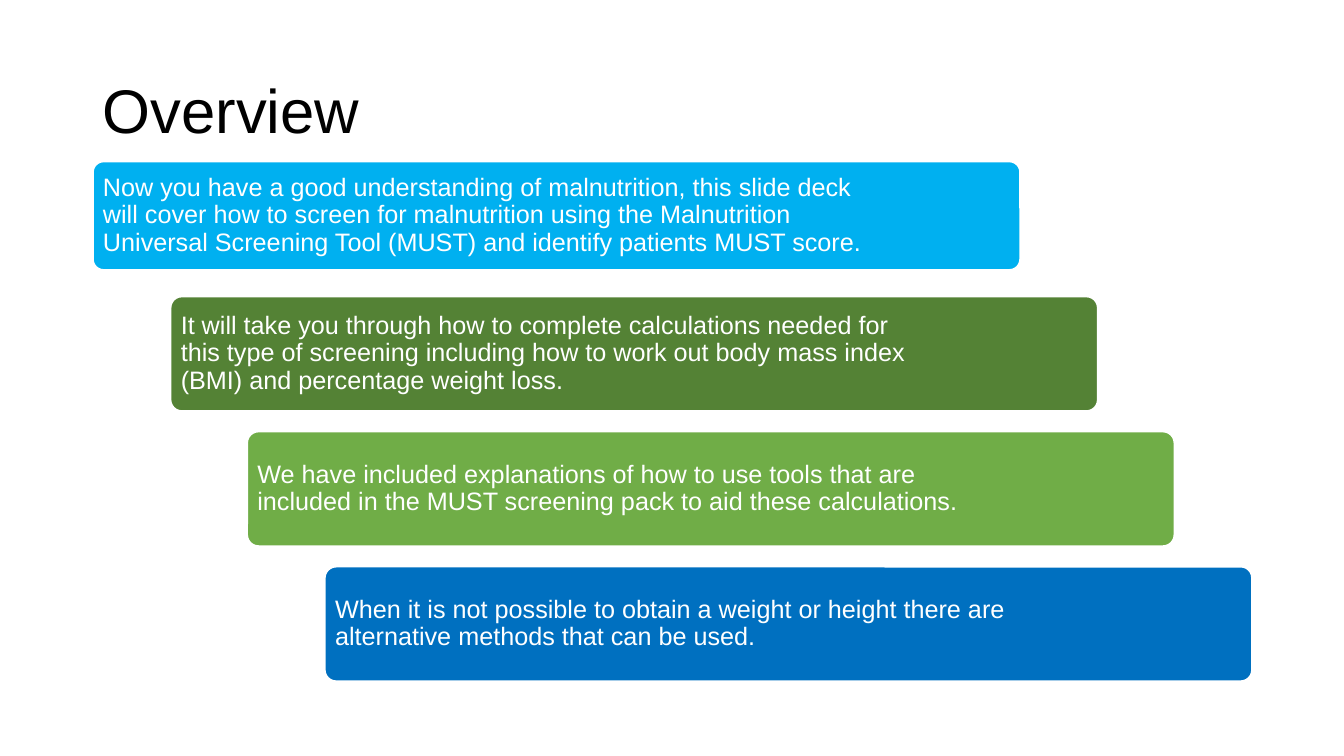
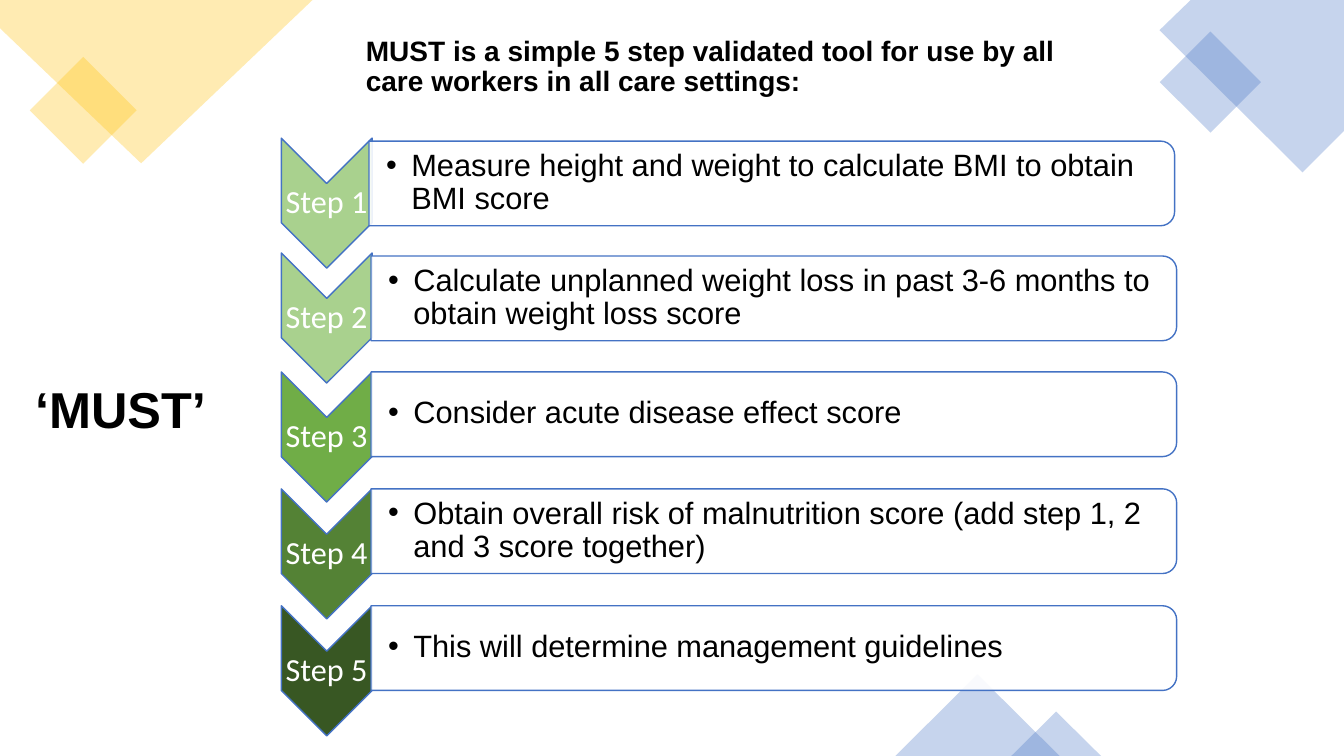
from lxml import etree
from pptx import Presentation
from pptx import util as u
from pptx.dml.color import RGBColor
from pptx.enum import shapes, text
from pptx.oxml.ns import qn

# Shared style
PX = 9144  # 100 px to the inch
BLACK, WHITE, BLUE, GOLD = "000000", "FFFFFF", "4472C4", "FFC000"
SHAPE, ANCHOR, ALIGN = shapes.MSO_SHAPE, text.MSO_ANCHOR, text.PP_ALIGN
TITLE_FONT = {"name": "Arial"}
STEP_FONT = {"name": "Calibri", "size": u.Pt(23)}
BODY_FONT = {"name": "Arial", "size": u.Pt(22)}
CARD_FONT = {"name": "Arial", "size": u.Pt(18)}
DECOR_ALPHA, PANEL_ALPHA = 30, 90

# Slide 1 content: text, fill, height, right inset
CARDS = [
    ("Now you have a good understanding of malnutrition, this slide deck will cover how to "
     "screen for malnutrition using the Malnutrition Universal Screening Tool (MUST) and "
     "identify patients MUST score.", "00B0F0", 108, 135),
    ("It will take you through how to complete calculations needed for this type of screening "
     "including how to work out body mass index (BMI) and percentage weight loss.",
     "548235", 114, 170),
    ("We have included explanations of how to use tools that are included in the MUST "
     "screening pack to aid these calculations.", "70AD47", 114, 170),
    ("When it is not possible to obtain a weight or height there are alternative methods that "
     "can be used.", "0070C0", 114, 170),
]

# Slide 2 content: text, chevron fill, chevron top, panel left, panel top
INTRO = "MUST is a simple 5 step validated tool for use by all care workers in all care settings:"
STEPS = [
    ("Measure height and weight to calculate BMI to obtain BMI score", "A9D18E", 137, 366, 140),
    ("Calculate unplanned weight loss in past 3-6 months to obtain weight loss score",
     "A9D18E", 251, 368, 254),
    ("Consider acute disease effect score", "70AD47", 369, 368, 369),
    ("Obtain overall risk of malnutrition score (add step 1, 2 and 3 score together)",
     "548235", 485, 368, 485),
    ("This will determine management guidelines", "385723", 601, 368, 601),
]
DECOR_SHAPES = [  # kind, box, rotation, colour
    (SHAPE.RECTANGLE, (45, 72, 75, 75), 45, GOLD),
    (SHAPE.RECTANGLE, (1165, 46, 71, 71), 45, BLUE),
    (SHAPE.ISOSCELES_TRIANGLE, (888, 669, 163, 81), 0, BLUE),
    (SHAPE.ISOSCELES_TRIANGLE, (1003, 706, 89, 44), 0, BLUE),
]
DECOR_CORNERS = [  # outline, colour
    ([(0, 0), (310, 0), (140, 162), (0, 28)], GOLD),
    ([(1181, 0), (1333, 0), (1333, 130), (1292, 171), (1150, 30)], BLUE),
]


def color(value):
    return RGBColor.from_string(value)


def px(*values):
    return [round(v * PX) for v in values]


def paint(sp, fill, line=None, width=1, alpha=100):
    sp.shadow.inherit = False
    sp.fill.solid()
    sp.fill.fore_color.rgb = color(fill)
    if alpha < 100:
        clr = sp.fill._xPr.find(qn("a:solidFill"))[0]
        etree.SubElement(clr, qn("a:alpha"), val=str(alpha * 1000))
    if line:
        sp.line.color.rgb = color(line)
        sp.line.width = u.Pt(width)
    else:
        sp.line.fill.background()
    return sp


def add_shape(s, kind, box, rotation=0, **look):
    sp = s.shapes.add_shape(kind, *px(*box))
    sp.rotation = rotation
    return paint(sp, **look)


def add_turned(s, kind, box, **look):
    """Quarter-turned shape that fills the given box."""
    left, top, w, h = box
    turned = (left + (w - h) / 2, top + (h - w) / 2, h, w)
    return add_shape(s, kind, turned, 90, **look)


def write(sp, words, font, ink, anchor=ANCHOR.MIDDLE, align=ALIGN.LEFT, insets=(10, 5, 10, 5)):
    tf = sp.text_frame
    left, top, right, bottom = px(*insets)
    frame = {"word_wrap": True, "vertical_anchor": anchor, "margin_left": left,
             "margin_top": top, "margin_right": right, "margin_bottom": bottom}
    for name, value in frame.items():
        setattr(tf, name, value)
    p = tf.paragraphs[0]
    p.alignment, p.line_spacing = align, 0.9
    r = p.add_run()
    r.text = words
    for name, value in font.items():
        setattr(r.font, name, value)
    r.font.color.rgb = color(ink)
    return p


def add_text(s, box, words, font, ink=BLACK, **layout):
    return write(s.shapes.add_textbox(*px(*box)), words, font, ink, **layout)


def add_title(s, box, words, size, bold=False, anchor=ANCHOR.TOP):
    add_text(s, box, words, TITLE_FONT | {"size": u.Pt(size), "bold": bold}, anchor=anchor)


def add_bullet(p, indent=25):
    pPr = p._p.get_or_add_pPr()
    hang = px(indent)[0]
    pPr.set("marL", str(hang))
    pPr.set("indent", str(-hang))
    etree.SubElement(pPr, qn("a:buFont"), typeface="Arial")
    etree.SubElement(pPr, qn("a:buChar"), char="•")


def overview_slide(s):
    add_title(s, (92, 40, 1150, 145), "Overview", 44, anchor=ANCHOR.MIDDLE)
    # Staircase of cards
    for i, (words, fill, height, right) in enumerate(CARDS):
        box = (round(92 + 76.6 * i), 160 + 134 * i, 920, height)
        sp = add_shape(s, SHAPE.ROUNDED_RECTANGLE, box, fill=fill, line=WHITE, width=1.5)
        sp.adjustments[0] = 0.1
        write(sp, words, CARD_FONT, WHITE, insets=(7, 7, right, 7))


def must_slide(s):
    # Corner decoration
    for kind, box, rotation, fill in DECOR_SHAPES:
        add_shape(s, kind, box, rotation, fill=fill, alpha=DECOR_ALPHA)
    for points, fill in DECOR_CORNERS:
        outline = s.shapes.build_freeform(*points[0], scale=PX)
        outline.add_line_segments(points[1:], close=True)
        paint(outline.convert_to_shape(), fill, alpha=DECOR_ALPHA)

    # Headings
    add_title(s, (25, 377, 240, 70), "‘MUST’", 36, bold=True)
    add_title(s, (353, 32, 708, 75), INTRO, 20, bold=True)

    # Steps
    for i, (words, fill, top, left, panel_top) in enumerate(STEPS, 1):
        add_turned(s, SHAPE.CHEVRON, (279, top, 90, 129), fill=fill, line=BLUE)
        add_text(s, (279, top + 45, 90, 39), f"Step {i}", STEP_FONT, WHITE,
                 align=ALIGN.CENTER, insets=(2, 2, 2, 2))
        add_turned(s, SHAPE.ROUND_2_SAME_RECTANGLE, (left, panel_top, 799, 84),
                   fill=WHITE, line=BLUE, alpha=PANEL_ALPHA)
        add_bullet(add_text(s, (left, panel_top + 4, 795, 75), words, BODY_FONT,
                            insets=(17, 2, 2, 2)))


def main():
    prs = Presentation()
    prs.slide_width, prs.slide_height = px(1333, 750)
    for build in (overview_slide, must_slide):
        build(prs.slides.add_slide(prs.slide_layouts[6]))
    prs.save("out.pptx")


if __name__ == "__main__":
    main()
